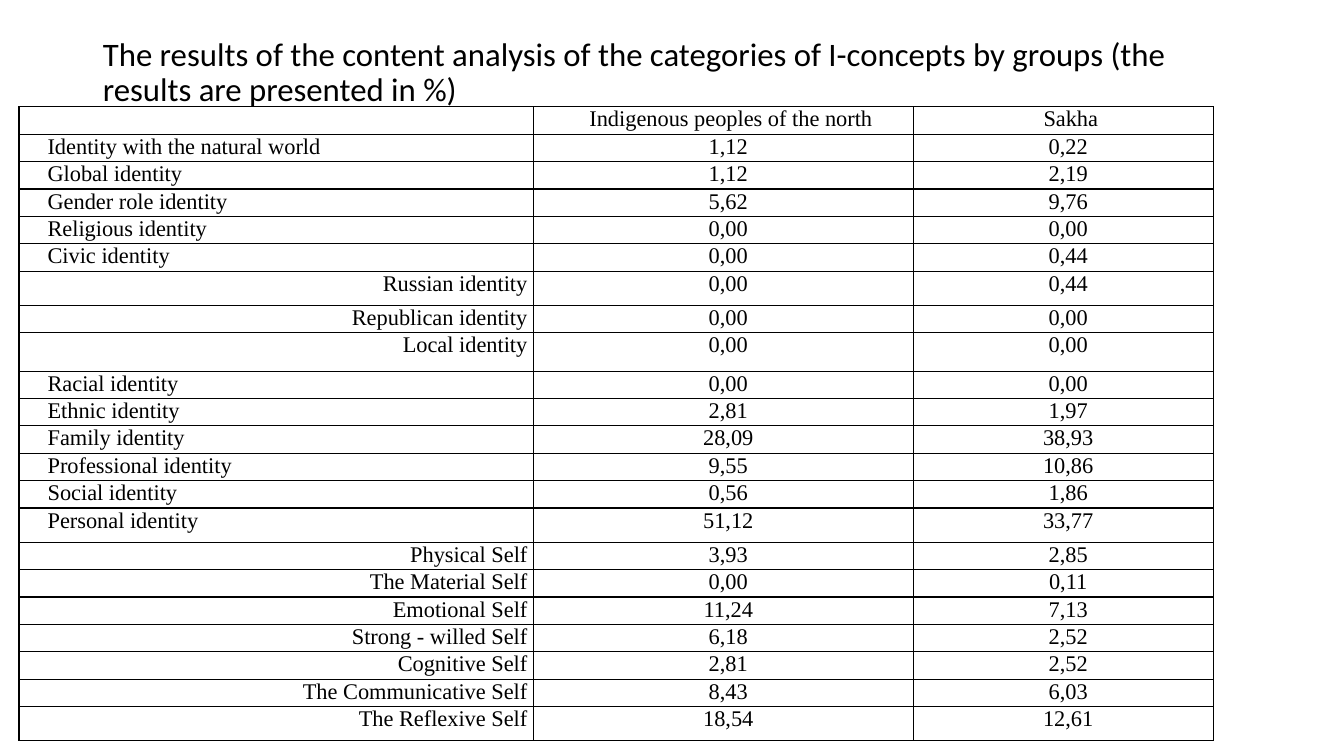
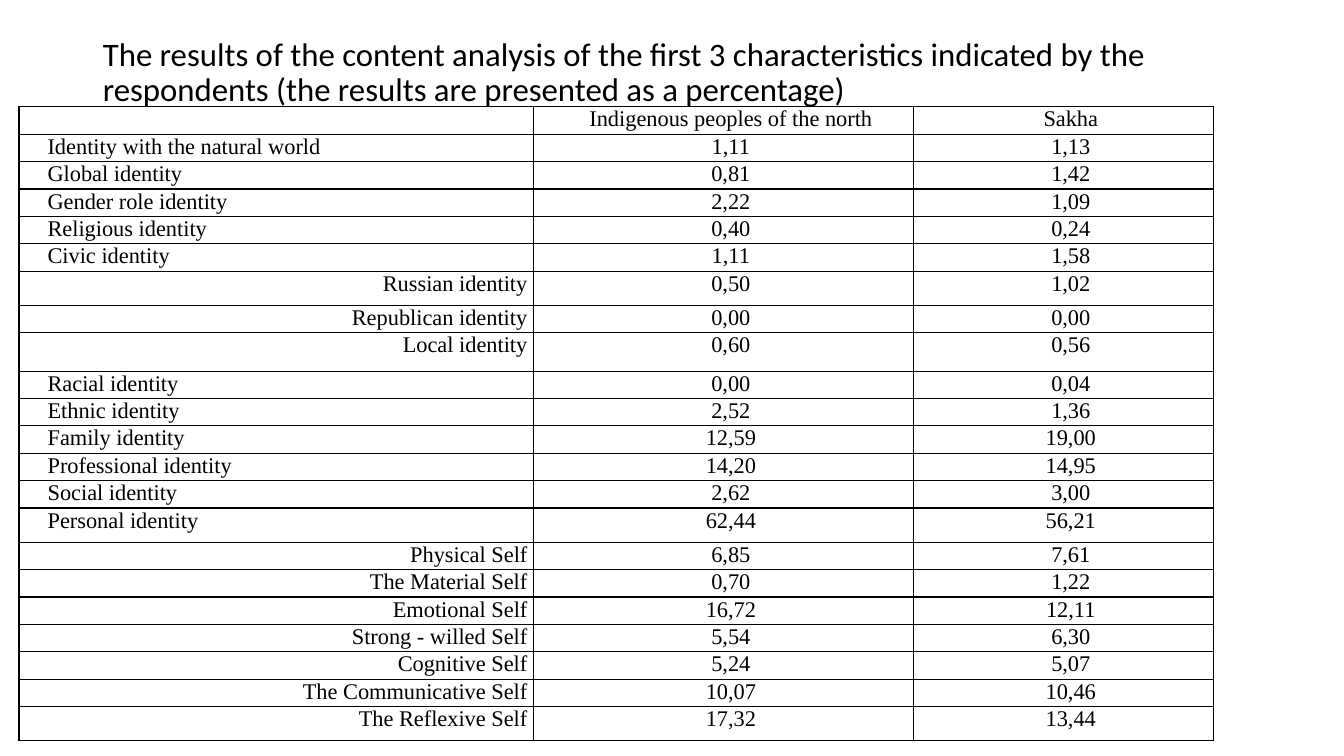
"""Build two slides that compare identity categories across two groups."""
from dataclasses import dataclass
from typing import Any

from lxml import etree
from pptx import Presentation
from pptx import util as u
from pptx.dml import color
from pptx.enum import text
from pptx.oxml import ns

PX_PER_INCH = 250


@dataclass(frozen=True)
class Theme:
    """Colours, fonts and type sizes of the presentation."""
    ink: str = "000000"
    title_font: str = "Calibri"
    title_size: float = 23.4
    table_font: str = "Times New Roman"
    table_size: float = 16
    border_width: float = 1


@dataclass(frozen=True)
class Category:
    """One table row: its label, level and height."""
    label: str
    nested: bool = False
    height: int = 68


@dataclass(frozen=True)
class CellStyle:
    """Alignment, first-line indent and side margin of a cell."""
    align: Any
    indent: int
    margin: int = 16


@dataclass(frozen=True)
class ResultSlide:
    """Title and group values of one slide."""
    title: str
    values: tuple[tuple[str, ...], tuple[str, ...]]
    value_style: CellStyle


THEME = Theme()
SLIDE_SIZE = (3333, 1875)
TITLE_BOX = (230, 100, 2875, 165)
TABLE_ORIGIN = (47, 265)
COLUMN_WIDTHS = (1277, 942, 744)
HEADER_HEIGHT = 68
TALL = 85
HEADINGS = ("", "Indigenous peoples of the north", "Sakha")

HEADING_STYLE = CellStyle(text.PP_ALIGN.CENTER, 35)
LABEL_STYLE = CellStyle(text.PP_ALIGN.JUSTIFY, 55)
NESTED_STYLE = CellStyle(text.PP_ALIGN.RIGHT, 55)
COMPACT_STYLE = CellStyle(text.PP_ALIGN.CENTER, 22, 17)

CATEGORIES = (
    Category("Identity with the natural world"),
    Category("Global identity"),
    Category("Gender role identity"),
    Category("Religious identity"),
    Category("Civic identity"),
    Category("Russian identity", True, TALL),
    Category("Republican identity", True),
    Category("Local identity", True, 95),
    Category("Racial identity"),
    Category("Ethnic identity"),
    Category("Family identity"),
    Category("Professional identity"),
    Category("Social identity"),
    Category("Personal identity", False, TALL),
    Category("Physical Self", True),
    Category("The Material Self", True),
    Category("Emotional Self", True),
    Category("Strong - willed Self", True),
    Category("Cognitive Self", True),
    Category("The Communicative Self", True),
    Category("The Reflexive Self", True, TALL),
)

RESULT_SLIDES = (
    ResultSlide(
        "The results of the content analysis of the categories of I-concepts "
        "by groups (the results are presented in %)",
        (
            ("1,12", "1,12", "5,62", "0,00", "0,00", "0,00", "0,00",
             "0,00", "0,00", "2,81", "28,09", "9,55", "0,56", "51,12",
             "3,93", "0,00", "11,24", "6,18", "2,81", "8,43", "18,54"),
            ("0,22", "2,19", "9,76", "0,00", "0,44", "0,44", "0,00",
             "0,00", "0,00", "1,97", "38,93", "10,86", "1,86", "33,77",
             "2,85", "0,11", "7,13", "2,52", "2,52", "6,03", "12,61"),
        ),
        COMPACT_STYLE,
    ),
    ResultSlide(
        "The results of the content analysis of the first 3 characteristics "
        "indicated by the respondents (the results are presented as a percentage)",
        (
            ("1,11", "0,81", "2,22", "0,40", "1,11", "0,50", "0,00",
             "0,60", "0,00", "2,52", "12,59", "14,20", "2,62", "62,44",
             "6,85", "0,70", "16,72", "5,54", "5,24", "10,07", "17,32"),
            ("1,13", "1,42", "1,09", "0,24", "1,58", "1,02", "0,00",
             "0,56", "0,04", "1,36", "19,00", "14,95", "3,00", "56,21",
             "7,61", "1,22", "12,11", "6,30", "5,07", "10,46", "13,44"),
        ),
        HEADING_STYLE,
    ),
)


def px(length: int) -> u.Emu:
    """Turn px into EMU."""
    return u.Emu(round(length * u.Inches(1) / PX_PER_INCH))


def apply_format(target: Any, values: dict[str, Any]) -> None:
    """Set each named attribute on the target."""
    for name, value in values.items():
        setattr(target, name, value)


def format_font(font: Any, name: str, size: float) -> None:
    """Apply a typeface and size in the theme ink."""
    apply_format(font, {"name": name, "size": u.Pt(size), "bold": False})
    font.color.rgb = color.RGBColor.from_string(THEME.ink)


def add_title(slide: Any, wording: str) -> None:
    """Place and format the title placeholder."""
    title = slide.shapes.title
    apply_format(title, dict(zip(("left", "top", "width", "height"), map(px, TITLE_BOX))))
    frame = title.text_frame
    frame.text = wording
    apply_format(frame, {
        "word_wrap": True,
        "auto_size": text.MSO_AUTO_SIZE.NONE,
        "vertical_anchor": text.MSO_ANCHOR.MIDDLE,
    })
    paragraph = frame.paragraphs[0]
    apply_format(paragraph, {"alignment": text.PP_ALIGN.LEFT, "line_spacing": 0.9})
    format_font(paragraph.runs[0].font, THEME.title_font, THEME.title_size)


def draw_borders(cell: Any) -> None:
    """Outline all four sides of a cell."""
    properties = cell._tc.get_or_add_tcPr()
    for position, side in enumerate(("lnL", "lnR", "lnT", "lnB")):
        line = etree.Element(ns.qn(f"a:{side}"), w=str(u.Pt(THEME.border_width)))
        fill = etree.SubElement(line, ns.qn("a:solidFill"))
        etree.SubElement(fill, ns.qn("a:srgbClr"), val=THEME.ink)
        properties.insert(position, line)


def fill_cell(cell: Any, wording: str, style: CellStyle) -> None:
    """Write and format one table cell."""
    apply_format(cell, {
        "margin_left": px(style.margin),
        "margin_right": px(style.margin),
        "margin_top": 0,
        "margin_bottom": 0,
        "vertical_anchor": text.MSO_ANCHOR.TOP,
    })
    cell.fill.background()
    draw_borders(cell)
    paragraph = cell.text_frame.paragraphs[0]
    paragraph.alignment = style.align
    paragraph._p.get_or_add_pPr().set("indent", str(px(style.indent)))
    if wording:
        run = paragraph.add_run()
        run.text = wording
        format_font(run.font, THEME.table_font, THEME.table_size)
    else:
        etree.SubElement(paragraph._p, ns.qn("a:endParaRPr"),
                         sz=str(round(THEME.table_size * 100)))


def add_results_table(slide: Any, result: ResultSlide) -> None:
    """Draw the table of category values by group."""
    heights = (HEADER_HEIGHT, *(category.height for category in CATEGORIES))
    size = (sum(COLUMN_WIDTHS), sum(heights))
    table = slide.shapes.add_table(
        len(heights), len(COLUMN_WIDTHS), *map(px, TABLE_ORIGIN + size)).table
    apply_format(table, {"first_row": False, "horz_banding": False})
    for column, width in zip(table.columns, COLUMN_WIDTHS):
        column.width = px(width)
    for row, height in zip(table.rows, heights):
        row.height = px(height)
    for cell, heading in zip(table.rows[0].cells, HEADINGS):
        fill_cell(cell, heading, HEADING_STYLE)
    for index, (category, *values) in enumerate(zip(CATEGORIES, *result.values), 1):
        label_style = NESTED_STYLE if category.nested else LABEL_STYLE
        fill_cell(table.cell(index, 0), category.label, label_style)
        for column_index, value in enumerate(values, 1):
            fill_cell(table.cell(index, column_index), value, result.value_style)


def main() -> None:
    """Build and save the presentation."""
    presentation = Presentation()
    apply_format(presentation, dict(zip(("slide_width", "slide_height"), map(px, SLIDE_SIZE))))
    layout = presentation.slide_layouts.get_by_name("Title Only")
    for result in RESULT_SLIDES:
        slide = presentation.slides.add_slide(layout)
        add_title(slide, result.title)
        add_results_table(slide, result)
    presentation.save("out.pptx")


if __name__ == "__main__":
    main()
